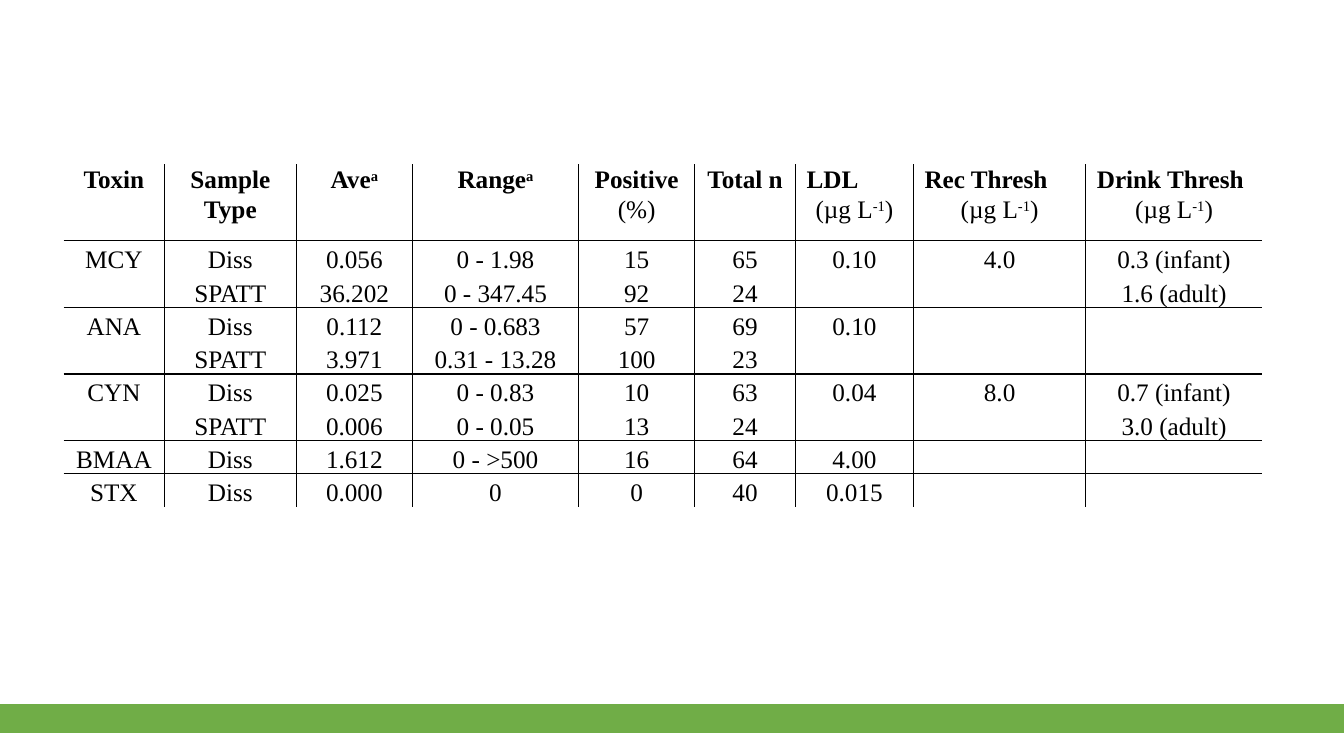
"""Build a slide with a table of toxin concentrations and thresholds."""
from dataclasses import dataclass

from lxml.etree import SubElement
from pptx import Presentation
from pptx.dml.color import RGBColor
from pptx.enum.shapes import MSO_SHAPE
from pptx.enum.text import MSO_ANCHOR, PP_ALIGN
from pptx.oxml.ns import qn
from pptx.slide import Slide
from pptx.table import Table, _Cell
from pptx.text.text import _Paragraph
from pptx.util import Inches, Pt

BLACK = RGBColor(0x00, 0x00, 0x00)
WHITE = RGBColor(0xFF, 0xFF, 0xFF)
GREEN = RGBColor(0x70, 0xAD, 0x47)
FONT_FORMAT = {"name": "Times New Roman", "size": Pt(18)}
CELL_FORMAT = {
    "margin_left": Inches(0.11),
    "margin_right": Inches(0.11),
    "margin_top": 0,
    "margin_bottom": 0,
}
TABLE_FORMAT = {"first_row": False, "horz_banding": False}
HEADER_HEIGHT, ROW_HEIGHT = 0.76, 0.33


@dataclass(frozen=True)
class Column:
    """A table column and the parts of its heading."""
    heading: str
    width: float
    footnote: str = ""
    unit: str = ""
    exponent: str = ""
    align: PP_ALIGN = PP_ALIGN.CENTER


CONCENTRATION = {"unit": "(µg L", "exponent": "-1", "align": PP_ALIGN.LEFT}
COLUMNS = [
    Column("Toxin", 1),
    Column("Sample Type", 1.31),
    Column("Ave", 1.15, footnote="a"),
    Column("Range", 1.65, footnote="a"),
    Column("Positive", 1.15, unit="(%)"),
    Column("Total n", 1),
    Column("LDL", 1.17, **CONCENTRATION),
    Column("Rec Thresh", 1.71, **CONCENTRATION),
    Column("Drink Thresh", 1.75, **CONCENTRATION),
]
SAMPLES = [
    ("MCY", "Diss", "0.056", "0 - 1.98", "15", "65", "0.10", "4.0", "0.3 (infant)"),
    ("", "SPATT", "36.202", "0 - 347.45", "92", "24", "", "", "1.6 (adult)"),
    ("ANA", "Diss", "0.112", "0 - 0.683", "57", "69", "0.10", "", ""),
    ("", "SPATT", "3.971", "0.31 - 13.28", "100", "23", "", "", ""),
    ("CYN", "Diss", "0.025", "0 - 0.83", "10", "63", "0.04", "8.0", "0.7 (infant)"),
    ("", "SPATT", "0.006", "0 - 0.05", "13", "24", "", "", "3.0 (adult)"),
    ("BMAA", "Diss", "1.612", "0 - >500", "16", "64", "4.00", "", ""),
    ("STX", "Diss", "0.000", "0", "0", "40", "0.015", "", ""),
]


def apply_format(target: object, values: dict) -> None:
    """Set every attribute named in a format."""
    for attribute, value in values.items():
        setattr(target, attribute, value)


def add_text(paragraph: _Paragraph, text: str, bold: bool = False,
             raised: bool = False) -> None:
    """Add a formatted run, raised when it is a superscript."""
    if not text:
        return
    run = paragraph.add_run()
    run.text = text
    apply_format(run.font, FONT_FORMAT | {"bold": bold})
    run.font.color.rgb = BLACK
    if raised:
        run.font._rPr.set("baseline", "30000")


def set_borders(cell: _Cell, edges: dict[str, bool]) -> None:
    """Draw the cell edges that are on and clear the others."""
    properties = cell._tc.get_or_add_tcPr()
    for edge, visible in edges.items():
        line = SubElement(properties, qn(f"a:ln{edge}"), w=str(Pt(1)))
        if visible:
            fill = SubElement(line, qn("a:solidFill"))
            SubElement(fill, qn("a:srgbClr"), val=str(BLACK))
        else:
            SubElement(line, qn("a:noFill"))


def format_paragraph(paragraph: _Paragraph, align: PP_ALIGN) -> None:
    """Align a table paragraph and set its line spacing."""
    apply_format(paragraph, {"alignment": align, "line_spacing": 1.07})


def fill_heading(cell: _Cell, column: Column) -> None:
    """Write a column heading with its footnote mark and unit."""
    heading = cell.text_frame.paragraphs[0]
    format_paragraph(heading, column.align)
    add_text(heading, column.heading, bold=True)
    add_text(heading, column.footnote, bold=True, raised=True)
    if column.unit:
        unit = cell.text_frame.add_paragraph()
        format_paragraph(unit, PP_ALIGN.CENTER)
        add_text(unit, column.unit)
        if column.exponent:
            add_text(unit, column.exponent, raised=True)
            add_text(unit, ")")
    cell.fill.background()


def fill_value(cell: _Cell, value: str) -> None:
    """Write a sample value."""
    paragraph = cell.text_frame.paragraphs[0]
    format_paragraph(paragraph, PP_ALIGN.CENTER)
    add_text(paragraph, value)
    cell.vertical_anchor = MSO_ANCHOR.BOTTOM
    cell.fill.solid()
    cell.fill.fore_color.rgb = WHITE


def fill_table(table: Table) -> None:
    """Fill the table, ruling a line above each toxin."""
    apply_format(table, TABLE_FORMAT)
    starts_toxin = [False] + [bool(sample[0]) for sample in SAMPLES] + [False]
    for row_index, row in enumerate(table.rows):
        row.height = Inches(ROW_HEIGHT if row_index else HEADER_HEIGHT)
        for column_index, column in enumerate(COLUMNS):
            cell = table.cell(row_index, column_index)
            apply_format(cell, CELL_FORMAT)
            set_borders(cell, {
                "L": column_index > 0,
                "R": column_index < len(COLUMNS) - 1,
                "T": starts_toxin[row_index],
                "B": starts_toxin[row_index + 1],
            })
            if row_index:
                fill_value(cell, SAMPLES[row_index - 1][column_index])
            else:
                fill_heading(cell, column)


def add_footer_bar(slide: Slide) -> None:
    """Add the green bar along the foot of the slide."""
    bar = slide.shapes.add_shape(MSO_SHAPE.RECTANGLE, 0, Inches(6.99),
                                 Inches(13.33), Inches(0.28))
    bar.shadow.inherit = False
    bar.fill.solid()
    bar.fill.fore_color.rgb = GREEN
    bar.line.color.rgb = GREEN
    bar.line.width = Pt(1)


def add_toxin_table(slide: Slide) -> None:
    """Add the toxin table and size its columns."""
    width = sum(column.width for column in COLUMNS)
    height = HEADER_HEIGHT + ROW_HEIGHT * len(SAMPLES)
    table = slide.shapes.add_table(
        len(SAMPLES) + 1, len(COLUMNS), Inches(0.63), Inches(1.63),
        Inches(width), Inches(height)).table
    for table_column, column in zip(table.columns, COLUMNS):
        table_column.width = Inches(column.width)
    fill_table(table)


def main() -> None:
    """Build and save the presentation."""
    presentation = Presentation()
    presentation.slide_width = Inches(13.33)
    presentation.slide_height = Inches(7.5)
    slide = presentation.slides.add_slide(presentation.slide_layouts[6])
    add_footer_bar(slide)
    add_toxin_table(slide)
    presentation.save("out.pptx")


if __name__ == "__main__":
    main()
